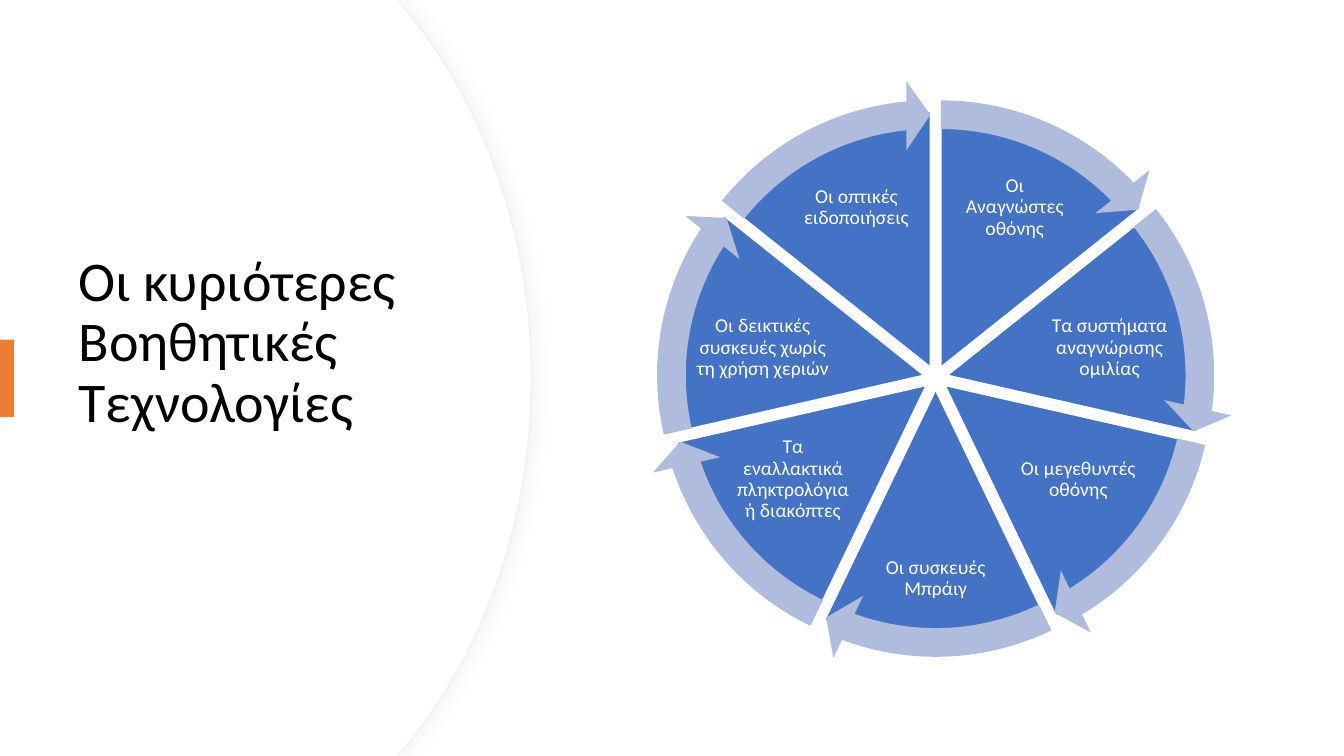
"""Build a slide with a title panel and a seven-part cycle of assistive technologies."""
from dataclasses import dataclass
from math import cos, pi, sin

from lxml.etree import SubElement
from pptx import Presentation
from pptx.dml.color import RGBColor as RGB
from pptx.enum.shapes import MSO_SHAPE as SHAPE
from pptx.enum.text import MSO_ANCHOR as ANCHOR, PP_ALIGN as ALIGN
from pptx.oxml.ns import qn
from pptx.util import Inches, Pt


@dataclass(frozen=True)
class Theme:
    font: str = "Calibri"
    title_size: int = 40
    label_size: int = 14
    white: str = "FFFFFF"
    black: str = "000000"
    edge: str = "EFEFEF"
    shadow: str = "D9D9D9"
    accent: str = "ED7D31"
    wedge: str = "4472C4"
    arrow: str = "B0BCDE"


theme = Theme()


def paint(sp, fill, line=None, width=1):
    sp.shadow.inherit = False
    sp.fill.solid()
    sp.fill.fore_color.rgb = RGB.from_string(fill)
    if line:
        sp.line.color.rgb = RGB.from_string(line)
        sp.line.width = Pt(width)
    else:
        sp.line.fill.background()


def write(sp, text, size, color, align):
    tf = sp.text_frame
    tf.text = text
    tf.word_wrap = True
    tf.vertical_anchor = ANCHOR.MIDDLE
    p = tf.paragraphs[0]
    p.alignment = align
    p.line_spacing = 0.9
    font = p.runs[0].font
    font.name = theme.font
    font.size = Pt(size)
    font.color.rgb = RGB.from_string(color)


prs = Presentation()
prs.slide_width, prs.slide_height = Inches(13.33), Inches(7.5)
slide = prs.slides.add_slide(prs.slide_layouts[5])
shapes = slide.shapes

for right, edge in ((5.27, theme.edge), (5.26, None)):
    upper = [(3.94, 0), (right - 1.26, 0.08), (right - 0.48, 1.02), (right, 2.32)]
    lower = [(x, 7.5 - y) for x, y in reversed(upper)]
    outline = upper + [(right, 3.75)] + lower + [(0, 7.5)]
    builder = shapes.build_freeform(0, 0)
    builder.add_line_segments([(Inches(x), Inches(y)) for x, y in outline])
    panel = builder.convert_to_shape()
    segments = list(panel._element.iter(qn("a:lnTo")))
    for first in (2, 5):
        controls = segments[first:first + 3]
        curve = controls[0].makeelement(qn("a:cubicBezTo"))
        controls[0].addprevious(curve)
        for segment in controls:
            curve.append(segment[0])
            segment.getparent().remove(segment)
    paint(panel, theme.white, edge, 0.75)
    if edge:
        effects = panel._element.spPr.find(qn("a:effectLst"))
        shadow = SubElement(effects, qn("a:outerShdw"), blurRad=str(Pt(10)), dist=str(Pt(3)),
                            dir="0", algn="l", rotWithShape="0")
        color = SubElement(shadow, qn("a:srgbClr"), val=theme.shadow)
        SubElement(color, qn("a:alpha"), val="30000")

title = shapes.title
title.left, title.top, title.width, title.height = (Inches(v) for v in (0.68, 1.27, 3.94, 4.95))
write(title, "Οι κυριότερες Βοηθητικές Τεχνολογίες", theme.title_size, theme.black, ALIGN.LEFT)
title.text_frame.margin_bottom = Inches(0.72)
shapes._spTree.append(title._element)

bar = shapes.add_shape(SHAPE.RECTANGLE, 0, Inches(3.37), Inches(0.14), Inches(0.77))
paint(bar, theme.accent)

labels = [
    ("Οι Αναγνώστες οθόνης", 9.46, 1.58, 1.21, 0.96),
    ("Τα συστήματα αναγνώρισης ομιλίας", 10.31, 3.03, 1.39, 0.84),
    ("Οι μεγεθυντές οθόνης", 10.09, 4.29, 1.21, 0.93),
    ("Οι συσκευές Μπράιγ", 8.69, 5.32, 1.18, 0.84),
    ("Τα εναλλακτικά πληκτρολόγια ή διακόπτες", 7.26, 4.29, 1.21, 0.93),
    ("Οι δεικτικές συσκευές χωρίς τη χρήση χεριών", 6.87, 3.03, 1.39, 0.84),
    ("Οι οπτικές ειδοποιήσεις", 7.89, 1.58, 1.21, 0.96),
]
center_x, center_y, offset = 9.28, 3.75, 0.12
wedge_size, arrow_size = 5.07, 5.69
full_turn, top_angle = 216, 162
sector = full_turn / len(labels)
arrow_band, arrow_tip, arrow_head = 0.05, 3.28, 0.06

parts = []
for i, label in enumerate(labels):
    middle = 2 * pi * (i + 0.5) / len(labels)
    parts.append((label, center_x + offset * sin(middle), center_y - offset * cos(middle),
                  (top_angle + sector * i) % full_turn,
                  (top_angle + sector * (i + 1)) % full_turn))

for (text, *box), x, y, start, end in parts:
    wedge = shapes.add_shape(SHAPE.PIE, Inches(x - wedge_size / 2), Inches(y - wedge_size / 2),
                             Inches(wedge_size), Inches(wedge_size))
    wedge.adjustments[0], wedge.adjustments[1] = start, end
    paint(wedge, theme.wedge, theme.white)
    caption = shapes.add_textbox(*(Inches(v) for v in box))
    write(caption, text, theme.label_size, theme.white, ALIGN.CENTER)
    tf = caption.text_frame
    tf.margin_left = tf.margin_right = tf.margin_top = tf.margin_bottom = Inches(0.02)

for _, x, y, start, end in parts:
    arrow = shapes.add_shape(SHAPE.CIRCULAR_ARROW, Inches(x - arrow_size / 2),
                             Inches(y - arrow_size / 2), Inches(arrow_size), Inches(arrow_size))
    for n, value in enumerate((arrow_band, arrow_tip, end - arrow_tip, start, arrow_head)):
        arrow.adjustments[n] = value
    paint(arrow, theme.arrow)

prs.save("out.pptx")
